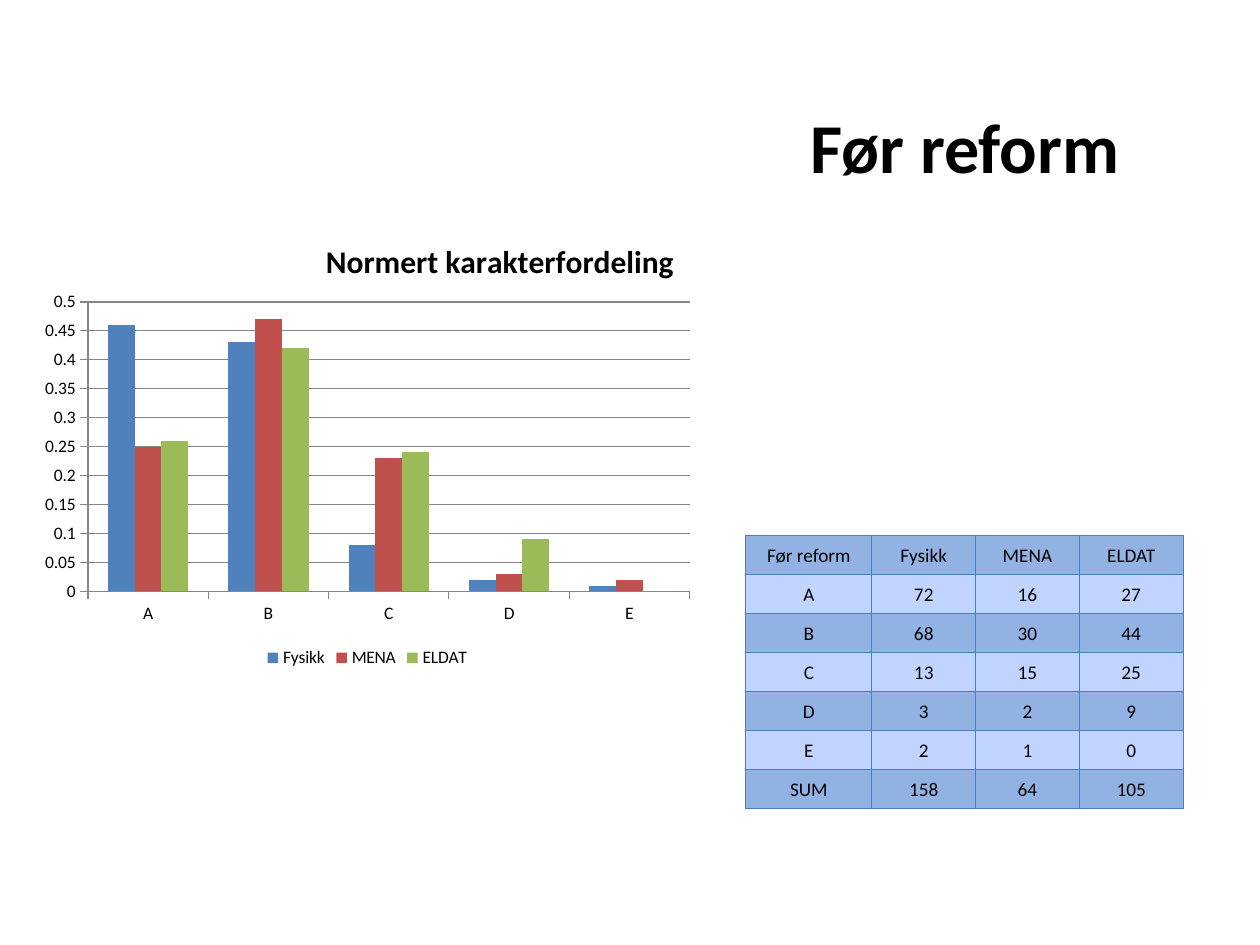
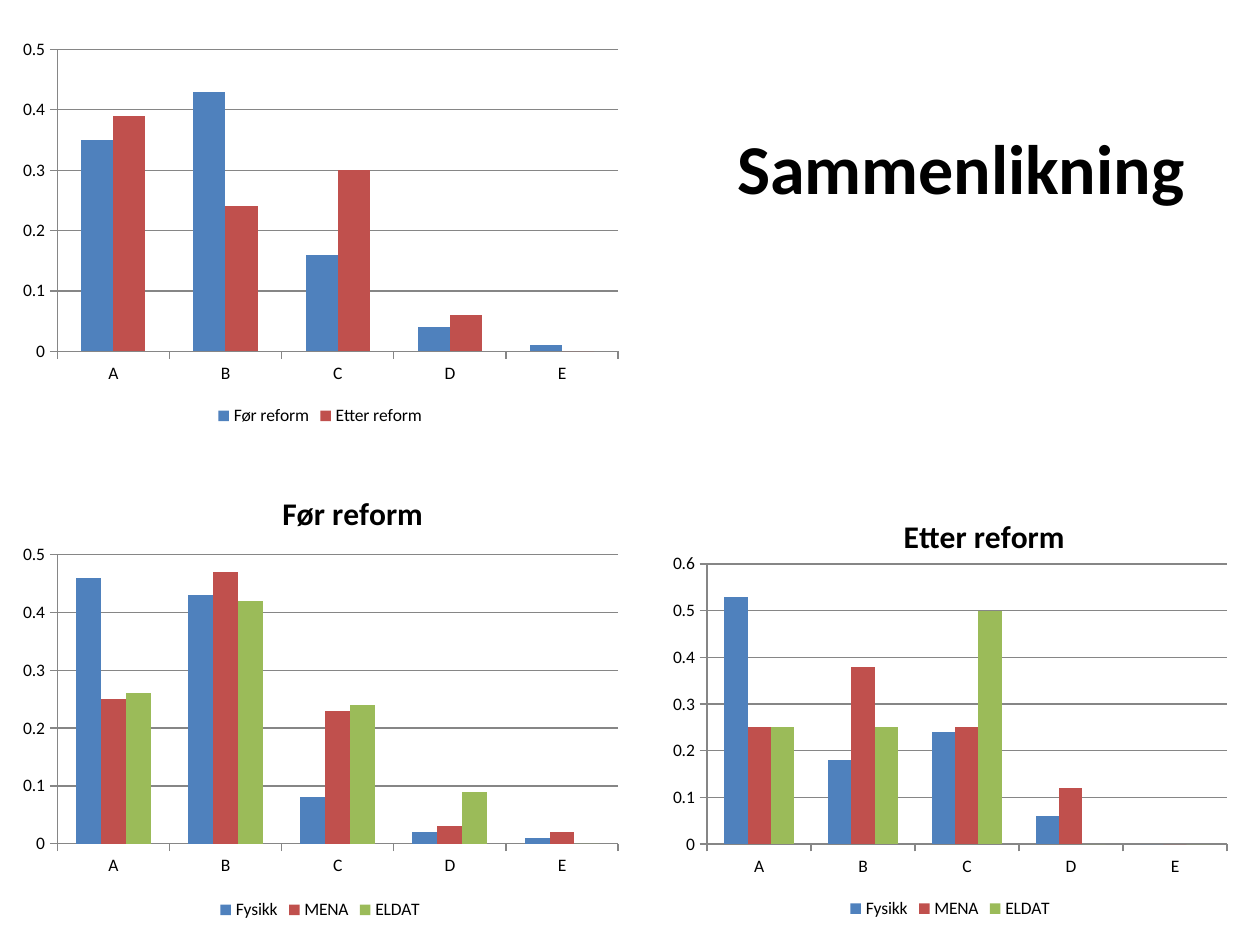
from dataclasses import dataclass

from pptx import Presentation
from pptx.chart.data import CategoryChartData
from pptx.dml.color import RGBColor
from pptx.enum.chart import XL_CHART_TYPE, XL_LEGEND_POSITION, XL_TICK_MARK
from pptx.enum.text import MSO_ANCHOR, MSO_AUTO_SIZE, PP_ALIGN
from pptx.oxml import parse_xml
from pptx.oxml.ns import nsdecls
from pptx.util import Inches, Pt

COLUMNS = XL_CHART_TYPE.COLUMN_CLUSTERED
BOTTOM = XL_LEGEND_POSITION.BOTTOM
TICK_OUTSIDE = XL_TICK_MARK.OUTSIDE
MIDDLE = MSO_ANCHOR.MIDDLE
GROW = MSO_AUTO_SIZE.SHAPE_TO_FIT_TEXT
CENTER, LEFT = PP_ALIGN.CENTER, PP_ALIGN.LEFT
TITLE_ONLY = 5


@dataclass(frozen=True)
class Theme:
    font: str = "Calibri"
    text: str = "000000"
    series: tuple = ("4F81BD", "C0504D", "9BBB59")
    grid: str = "868686"
    dark_row: str = "93B2E4"
    light_row: str = "C0D4FF"
    border: str = "4B7EBC"
    line: float = 0.75
    title_size: int = 40
    chart_title_size: int = 18
    table_size: int = 11
    chart_size: int = 10


THEME = Theme()
GRADES = ["A", "B", "C", "D", "E"]
COUNTS_BEFORE = {
    "Fysikk": [72, 68, 13, 3, 2],
    "MENA": [16, 30, 15, 2, 1],
    "ELDAT": [27, 44, 25, 9, 0],
}
SHARES_AFTER = {
    "Fysikk": [0.53, 0.18, 0.24, 0.06, 0],
    "MENA": [0.25, 0.38, 0.25, 0.12, 0],
    "ELDAT": [0.25, 0.25, 0.5, 0, 0],
}


def shares(counts):
    return [round(count / sum(counts), 2) for count in counts]


SHARES_BEFORE = {name: shares(counts) for name, counts in COUNTS_BEFORE.items()}
SHARES_COMPARED = {
    "Før reform": shares([sum(row) for row in zip(*COUNTS_BEFORE.values())]),
    "Etter reform": [0.39, 0.24, 0.3, 0.06, 0],
}


def style_font(font, size, bold=False):
    font.name = THEME.font
    font.size = Pt(size)
    font.bold = bold
    font.color.rgb = RGBColor.from_string(THEME.text)


def add_run(para, text, size, bold=False):
    span = para.add_run()
    span.text = text
    style_font(span.font, size, bold)


def add_page(deck, title, box):
    page = deck.slides.add_slide(deck.slide_layouts[TITLE_ONLY])
    holder = page.shapes.title
    holder.left, holder.top, holder.width, holder.height = map(Inches, box)
    frame = holder.text_frame
    frame.word_wrap = False
    frame.auto_size = GROW
    frame.vertical_anchor = MIDDLE
    frame.paragraphs[0].alignment = LEFT
    add_run(frame.paragraphs[0], title, THEME.title_size, bold=True)
    return page


def set_layout(element, index, target="", **fractions):
    """Place a chart part by fractions of the chart's size."""
    for old in element.xpath("c:layout"):
        element.remove(old)
    target = f'<c:layoutTarget val="{target}"/>' if target else ""
    modes = "".join(f'<c:{key}Mode val="edge"/>' for key in "xy")
    values = "".join(f'<c:{key} val="{value}"/>' for key, value in fractions.items())
    element.insert(index, parse_xml(
        f'<c:layout {nsdecls("c")}><c:manualLayout>{target}{modes}{values}'
        "</c:manualLayout></c:layout>"))


def style_axis(axis):
    axis.major_tick_mark = TICK_OUTSIDE
    style_line(axis.format.line)


def style_line(line):
    line.color.rgb = RGBColor.from_string(THEME.grid)
    line.width = Pt(THEME.line)


def add_chart_title(chart, title, left, top):
    chart.has_title = True
    heading = chart.chart_title
    add_run(heading.text_frame.paragraphs[0], title, THEME.chart_title_size, bold=True)
    element = heading._element
    set_layout(element, 1, x=left, y=top)
    for overlay in element.xpath("c:overlay"):
        overlay.set("val", "1")


def add_grade_chart(page, box, series, plot, top_value, step, title=None):
    """Add columns per grade; title is (text, left, top) in chart fractions."""
    data = CategoryChartData()
    data.categories = GRADES
    for name, values in series.items():
        data.add_series(name, values)
    chart = page.shapes.add_chart(COLUMNS, *map(Inches, box), data).chart
    style_font(chart.font, THEME.chart_size)
    chart.has_title = False
    if title:
        add_chart_title(chart, *title)
    chart.has_legend = True
    chart.legend.position = BOTTOM
    chart.legend.include_in_layout = False

    style_axis(chart.category_axis)
    axis = chart.value_axis
    style_axis(axis)
    axis.minimum_scale, axis.maximum_scale, axis.major_unit = 0, top_value, step
    axis.has_major_gridlines = True
    style_line(axis.major_gridlines.format.line)

    columns = chart.plots[0]
    columns.gap_width = 150
    columns.overlap = 0
    columns.vary_by_categories = False
    for one, color in zip(columns.series, THEME.series):
        one.invert_if_negative = False
        one.format.fill.solid()
        one.format.fill.fore_color.rgb = RGBColor.from_string(color)
    area = chart._chartSpace.xpath("c:chart/c:plotArea")[0]
    set_layout(area, 0, "inner", **dict(zip("xywh", plot)))


def add_borders(cell):
    properties = cell._tc.get_or_add_tcPr()
    for index, side in enumerate(("lnL", "lnR", "lnT", "lnB")):
        properties.insert(index, parse_xml(
            f'<a:{side} {nsdecls("a")} w="{Pt(THEME.line)}"><a:solidFill>'
            f'<a:srgbClr val="{THEME.border}"/></a:solidFill></a:{side}>'))


def fill_cell(cell, text, color):
    cell.margin_left = cell.margin_right = cell.margin_top = Inches(0.01)
    cell.margin_bottom = 0
    cell.vertical_anchor = MIDDLE
    cell.fill.solid()
    cell.fill.fore_color.rgb = RGBColor.from_string(color)
    para = cell.text_frame.paragraphs[0]
    para.alignment = CENTER
    add_run(para, text, THEME.table_size)
    add_borders(cell)


def add_count_table(page, box):
    rows = [["Før reform", *COUNTS_BEFORE],
            *zip(GRADES, *COUNTS_BEFORE.values()),
            ["SUM", *map(sum, COUNTS_BEFORE.values())]]
    left, top, width, height = box
    first_width = 1
    table = page.shapes.add_table(len(rows), len(rows[0]), *map(Inches, box)).table
    for index, column in enumerate(table.columns):
        share = (width - first_width) / len(COUNTS_BEFORE)
        column.width = Inches(share if index else first_width)
    for row_index, row in enumerate(rows):
        table.rows[row_index].height = Inches(height / len(rows))
        color = THEME.light_row if row_index % 2 else THEME.dark_row
        for column_index, value in enumerate(row):
            fill_cell(table.cell(row_index, column_index), str(value), color)


def build_before_page(deck):
    page = add_page(deck, "Før reform", (6.33, 0.77, 2.68, 0.77))
    add_count_table(page, (5.92, 4.25, 3.47, 2.17))
    add_grade_chart(page, (0.25, 1.67, 5.33, 3.67), SHARES_BEFORE,
                    (0.084, 0.198, 0.896, 0.626), 0.5, 0.05,
                    ("Normert karakterfordeling", 0.43, 0.05))


def build_comparison_page(deck):
    page = add_page(deck, "Sammenlikning", (5.75, 0.94, 3.79, 0.77))
    add_grade_chart(page, (0.08, 3.67, 4.92, 3.67), SHARES_BEFORE,
                    (0.076, 0.199, 0.905, 0.626), 0.5, 0.1,
                    ("Før reform", 0.43, 0.05))
    add_grade_chart(page, (5.25, 3.75, 4.58, 3.58), SHARES_AFTER,
                    (0.079, 0.203, 0.901, 0.621), 0.6, 0.1,
                    ("Etter reform", 0.41, 0.08))
    add_grade_chart(page, (0.08, 0.25, 4.92, 3.17), SHARES_COMPARED,
                    (0.076, 0.045, 0.905, 0.756), 0.5, 0.1)


def main():
    deck = Presentation()
    deck.slide_width, deck.slide_height = Inches(10), Inches(7.5)
    build_before_page(deck)
    build_comparison_page(deck)
    deck.save("out.pptx")


if __name__ == "__main__":
    main()
